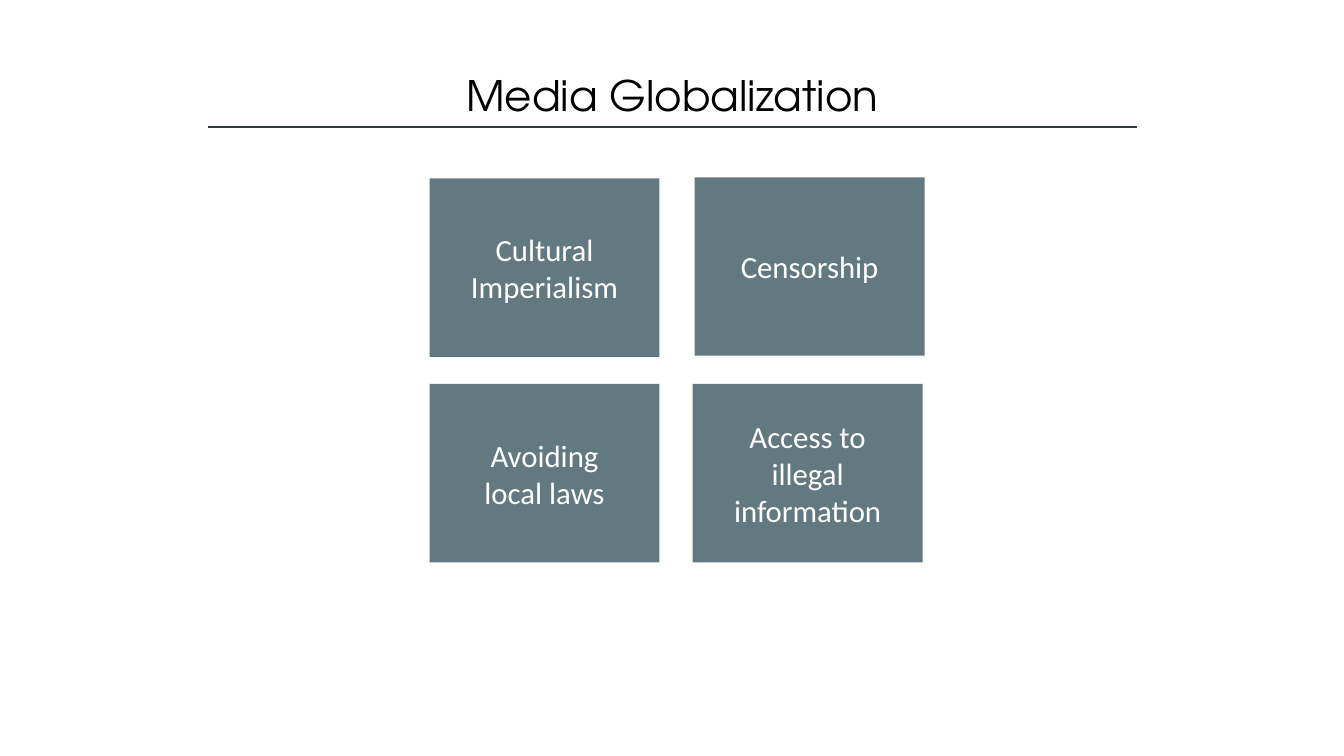
import dataclasses
from typing import Any

import pptx
import pptx.dml.color
import pptx.enum.shapes
import pptx.enum.text
import pptx.oxml
import pptx.util

Inches = pptx.util.Inches
COLORS = {"title": "000000", "rule": "323542", "card": "627981", "label": "FFFFFF"}
CARD_WIDTH, CARD_HEIGHT = 2.28, 1.77
LABEL_INSET = 0.23
LINE_HEIGHT, LABEL_MARGINS = 0.37, 0.1


@dataclasses.dataclass(frozen=True)
class Card:
    text: str
    left: float
    top: float
    lines: int


CARDS = [
    Card("Cultural Imperialism", 4.26, 1.77, 2),
    Card("Avoiding local laws", 4.26, 3.81, 2),
    Card("Access to illegal information", 6.87, 3.81, 3),
    Card("Censorship", 6.89, 1.76, 1),
]


def color(name: str) -> pptx.dml.color.RGBColor:
    return pptx.dml.color.RGBColor.from_string(COLORS[name])


def apply_format(target: Any, values: dict[str, Any]) -> None:
    for name, value in values.items():
        setattr(target, name, value)


def write_text(shape: Any, text: str, font_name: str, size: int, color_name: str) -> None:
    frame = shape.text_frame
    frame.text = text
    apply_format(frame, {
        "word_wrap": True,
        "auto_size": pptx.enum.text.MSO_AUTO_SIZE.SHAPE_TO_FIT_TEXT,
        "vertical_anchor": pptx.enum.text.MSO_ANCHOR.MIDDLE,
    })
    paragraph = frame.paragraphs[0]
    paragraph.alignment = pptx.enum.text.PP_ALIGN.CENTER
    font = paragraph.runs[0].font
    apply_format(font, {"name": font_name, "size": pptx.util.Pt(size)})
    font.color.rgb = color(color_name)


def add_rectangle(slide: Any, left: float, top: float, width: float, height: float) -> Any:
    shape = slide.shapes.add_shape(
        pptx.enum.shapes.MSO_SHAPE.RECTANGLE,
        Inches(left), Inches(top), Inches(width), Inches(height),
    )
    shape.shadow.inherit = False
    shape.fill.solid()
    shape.fill.fore_color.rgb = color("card")
    shape.line.fill.background()
    return shape


def add_title(slide: Any, text: str) -> None:
    title = slide.shapes.title
    apply_format(title, {
        "left": Inches(1.67), "top": Inches(0.63),
        "width": Inches(10), "height": Inches(0.61),
    })
    write_text(title, text, "TeX Gyre Adventor", 30, "title")


def add_rule(slide: Any) -> None:
    rule = slide.shapes.add_connector(
        pptx.enum.shapes.MSO_CONNECTOR.STRAIGHT,
        Inches(2.06), Inches(1.26), Inches(11.28), Inches(1.26),
    )
    rule.line.color.rgb = color("rule")
    rule.line.width = pptx.util.Pt(1)
    properties = rule._element.spPr
    properties.append(properties.makeelement(pptx.oxml.ns.qn("a:effectLst"), {}))


def add_card(slide: Any, card: Card) -> None:
    add_rectangle(slide, card.left, card.top, CARD_WIDTH, CARD_HEIGHT)
    label_height = LABEL_MARGINS + LINE_HEIGHT * card.lines
    label = add_rectangle(
        slide,
        card.left + LABEL_INSET,
        card.top + (CARD_HEIGHT - label_height) / 2,
        CARD_WIDTH - 2 * LABEL_INSET,
        label_height,
    )
    write_text(label, card.text, "Calibri", 22, "label")


def main() -> None:
    presentation = pptx.Presentation()
    apply_format(presentation, {"slide_width": Inches(13.33), "slide_height": Inches(7.5)})
    slide = presentation.slides.add_slide(presentation.slide_layouts.get_by_name("Title Only"))
    add_title(slide, "Media Globalization")
    add_rule(slide)
    for card in CARDS:
        add_card(slide, card)
    presentation.save("out.pptx")


if __name__ == "__main__":
    main()
